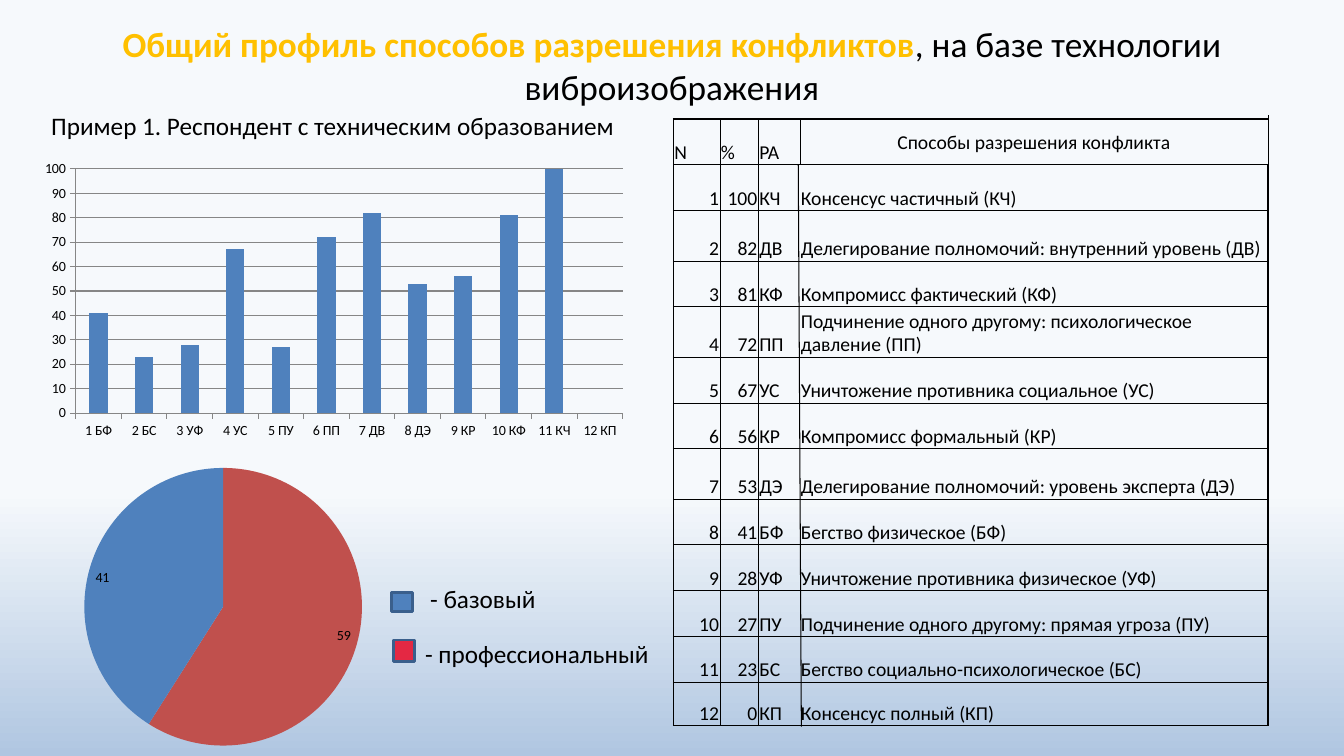
from dataclasses import dataclass

import lxml.etree
import pptx
import pptx.chart.data
import pptx.dml.color
import pptx.enum.chart
import pptx.enum.dml
import pptx.enum.shapes
import pptx.enum.text
import pptx.oxml
import pptx.oxml.ns
import pptx.util

Pt = pptx.util.Pt
qn = pptx.oxml.ns.qn
Align = pptx.enum.text.PP_ALIGN
Anchor = pptx.enum.text.MSO_ANCHOR

FONT = "Calibri"
COLORS = {
    "text": "000000", "accent": "FFC000", "blue": "4F81BD", "red": "C0504D",
    "key_red": "E42843", "key_line": "3A5F8C", "grid": "868686",
    "sky": "F6F9FC", "haze": "B0C6E1",
}


@dataclass
class Frame:
    left: float
    top: float
    width: float
    height: float

    def lengths(self) -> tuple:
        return Pt(self.left), Pt(self.top), Pt(self.width), Pt(self.height)


@dataclass
class Way:
    percent: int
    code: str
    name: str


@dataclass
class Caption:
    text: str
    frame: Frame
    wrap: bool = True


@dataclass
class Key:
    color: str
    frame: Frame


@dataclass
class Rule:
    start: tuple[float, float]
    end: tuple[float, float]


WAYS = [
    Way(100, "КЧ", "Консенсус частичный"),
    Way(82, "ДВ", "Делегирование полномочий: внутренний уровень"),
    Way(81, "КФ", "Компромисс фактический"),
    Way(72, "ПП", "Подчинение одного другому: психологическое давление"),
    Way(67, "УС", "Уничтожение противника социальное"),
    Way(56, "КР", "Компромисс формальный"),
    Way(53, "ДЭ", "Делегирование полномочий: уровень эксперта"),
    Way(41, "БФ", "Бегство физическое"),
    Way(28, "УФ", "Уничтожение противника физическое"),
    Way(27, "ПУ", "Подчинение одного другому: прямая угроза"),
    Way(23, "БС", "Бегство социально-психологическое"),
    Way(0, "КП", "Консенсус полный"),
]
PROFILE = "БФ БС УФ УС ПУ ПП ДВ ДЭ КР КФ КЧ КП".split()
COLUMN_WIDTHS = [33.3, 27.4, 29.7, 334.4]
ROW_HEIGHTS = {2: 36, 4: 36, 7: 36, 12: 31}
ROW_HEIGHT = 32.7

CAPTIONS = [
    Caption("- базовый", Frame(300.2, 413.3, 95, 29), wrap=False),
    Caption("- профессиональный", Frame(296.6, 452.2, 182.2, 29)),
    Caption("Пример 1. Респондент с техническим образованием", Frame(29.5, 74.9, 428.4, 29)),
]
KEYS = [
    Key("blue", Frame(279.4, 423.4, 15.1, 13.7)),
    Key("key_red", Frame(280.8, 457.2, 15.1, 15.1)),
]
RULES = [
    Rule((570.2, 117.4), (572.4, 519.1)),
    Rule((905.8, 118.1), (905.8, 82.1)),
]


def rgb(name: str) -> pptx.dml.color.RGBColor:
    return pptx.dml.color.RGBColor.from_string(COLORS[name])


def style_font(font, size: float, color: str = "text", bold: bool = False) -> None:
    font.name, font.size, font.bold = FONT, Pt(size), bold
    font.color.rgb = rgb(color)


def paint_background(page) -> None:
    fill = page.background.fill
    fill.gradient()
    fill.gradient_angle = 270
    for stop, name, position in zip(fill.gradient_stops, ("sky", "haze"), (0.65, 1)):
        stop.color.rgb = rgb(name)
        stop.position = position


def write_title(page) -> None:
    title = page.shapes.title
    title.left, title.top, title.width, title.height = Frame(48, 21.6, 864, 49.7).lengths()
    frame = title.text_frame
    frame.auto_size = pptx.enum.text.MSO_AUTO_SIZE.NONE
    frame.vertical_anchor = Anchor.MIDDLE
    para = frame.paragraphs[0]
    para.alignment = Align.CENTER
    parts = [
        ("Общий профиль способов разрешения конфликтов", "accent", True),
        (", на базе технологии виброизображения", "text", False),
    ]
    for text, color, bold in parts:
        span = para.add_run()
        span.text = text
        style_font(span.font, 25.2, color, bold)


def add_plain_chart(page, kind, frame: Frame, labels: list, values: list, layout: tuple):
    data = pptx.chart.data.CategoryChartData(number_format="0")
    data.categories = labels
    data.add_series("Series 1", values)
    chart = page.shapes.add_chart(kind, *frame.lengths(), data).chart
    chart.has_legend = chart.has_title = False
    style_font(chart.font, 10)
    area = chart.element.find(f".//{qn('c:plotArea')}")
    for old in area.findall(qn("c:layout")):
        area.remove(old)
    holder = lxml.etree.Element(qn("c:layout"))
    manual = lxml.etree.SubElement(holder, qn("c:manualLayout"))
    settings = [("layoutTarget", "inner"), ("xMode", "edge"), ("yMode", "edge"),
                *zip("xywh", layout)]
    for tag, value in settings:
        lxml.etree.SubElement(manual, qn(f"c:{tag}")).set("val", str(value))
    area.insert(0, holder)
    return chart


def add_profile_chart(page) -> None:
    percents = {way.code: way.percent for way in WAYS}
    chart = add_plain_chart(
        page, pptx.enum.chart.XL_CHART_TYPE.COLUMN_CLUSTERED, Frame(19.4, 105.8, 434.2, 249.1),
        [f"{number} {code}" for number, code in enumerate(PROFILE, 1)],
        [percents[code] for code in PROFILE], (0.08, 0.06, 0.9, 0.7))
    plot = chart.plots[0]
    plot.gap_width = 150
    plot.vary_by_categories = False
    bars = plot.series[0].format.fill
    bars.solid()
    bars.fore_color.rgb = rgb("blue")
    scale = chart.value_axis
    scale.minimum_scale, scale.maximum_scale, scale.major_unit = 0, 100, 10
    scale.tick_labels.number_format = "0"
    scale.tick_labels.number_format_is_linked = False
    for axis in (scale, chart.category_axis):
        axis.major_tick_mark = pptx.enum.chart.XL_TICK_MARK.OUTSIDE
    for ruled in (scale, chart.category_axis, scale.major_gridlines):
        ruled.format.line.color.rgb = rgb("grid")
        ruled.format.line.width = Pt(0.75)


def add_share_chart(page) -> None:
    chart = add_plain_chart(
        page, pptx.enum.chart.XL_CHART_TYPE.PIE, Frame(28.8, 334.1, 241.9, 198.7),
        ["1", "2"], [59, 41], (0.13, 0, 0.82, 1))
    plot = chart.plots[0]
    plot.vary_by_categories = True
    for index, color in enumerate(("red", "blue")):
        fill = plot.series[0].points[index].format.fill
        fill.solid()
        fill.fore_color.rgb = rgb(color)
    plot.has_data_labels = True
    labels = plot.data_labels
    labels.show_value = True
    labels.number_format, labels.number_format_is_linked = "0", False
    labels.position = pptx.enum.chart.XL_LABEL_POSITION.INSIDE_END
    style_font(labels.font, 10)


def set_borders(cell, left: float, right: float, top: float, bottom: float) -> None:
    properties = cell._tc.get_or_add_tcPr()
    for index, (side, width) in enumerate(zip("LRTB", (left, right, top, bottom))):
        line = lxml.etree.Element(qn(f"a:ln{side}"), w=str(int(Pt(width))))
        if width:
            fill = lxml.etree.SubElement(line, qn("a:solidFill"))
            lxml.etree.SubElement(fill, qn("a:srgbClr"), val=COLORS["text"])
        else:
            lxml.etree.SubElement(line, qn("a:noFill"))
        properties.insert(index, line)


def add_ways_table(page) -> None:
    rows = [["N", "%", "PA", "Способы разрешения конфликта"]]
    rows += [[str(rank), str(way.percent), way.code, f"{way.name} ({way.code})"]
             for rank, way in enumerate(WAYS, 1)]
    heights = [ROW_HEIGHTS.get(index, ROW_HEIGHT) for index in range(len(rows))]
    frame = Frame(481, 85, sum(COLUMN_WIDTHS), sum(heights))
    table = page.shapes.add_table(len(rows), len(COLUMN_WIDTHS), *frame.lengths()).table
    table.first_row = table.horz_banding = False
    for column, width in zip(table.columns, COLUMN_WIDTHS):
        column.width = Pt(width)
    for r, (texts, height) in enumerate(zip(rows, heights)):
        table.rows[r].height = Pt(height)
        header = r == 0
        for c, text in enumerate(texts):
            cell = table.cell(r, c)
            cell.fill.background()
            cell.margin_left = cell.margin_right = cell.margin_top = Pt(0.7)
            cell.margin_bottom = 0
            cell.vertical_anchor = Anchor.MIDDLE if header and c == 3 else Anchor.BOTTOM
            cell.text_frame.text = text
            para = cell.text_frame.paragraphs[0]
            if header:
                para.alignment = Align.CENTER if c == 3 else Align.LEFT
            else:
                para.alignment = Align.RIGHT if c < 2 else Align.LEFT
            style_font(para.runs[0].font, 14)
            inner = 0.5 if header else 0
            set_borders(cell, (1, 0.5, 0.5, inner)[c], (0.5, 0.5, inner, 0 if header else 1)[c],
                        1 if r < 2 else 0.5, 1 if r in (0, len(rows) - 1) else 0.5)


def add_key(page, key: Key) -> None:
    box = page.shapes.add_shape(pptx.enum.shapes.MSO_SHAPE.RECTANGLE, *key.frame.lengths())
    box.shadow.inherit = False
    box.fill.solid()
    box.fill.fore_color.rgb = rgb(key.color)
    box.line.color.rgb = rgb("key_line")
    box.line.width = Pt(2)


def add_caption(page, caption: Caption) -> None:
    frame = page.shapes.add_textbox(*caption.frame.lengths()).text_frame
    frame.word_wrap = caption.wrap
    frame.auto_size = pptx.enum.text.MSO_AUTO_SIZE.SHAPE_TO_FIT_TEXT
    frame.text = caption.text
    style_font(frame.paragraphs[0].runs[0].font, 18)


def add_rule(page, rule: Rule) -> None:
    line = page.shapes.add_connector(
        pptx.enum.shapes.MSO_CONNECTOR.STRAIGHT, *map(Pt, rule.start + rule.end))
    line.line.color.rgb = rgb("text")
    line.line.width = Pt(0.75)
    lxml.etree.SubElement(line._element.spPr, qn("a:effectLst"))


def main() -> None:
    deck = pptx.Presentation()
    deck.slide_width, deck.slide_height = Pt(960), Pt(540)
    page = deck.slides.add_slide(deck.slide_layouts[5])
    paint_background(page)
    write_title(page)
    add_profile_chart(page)
    add_ways_table(page)
    add_share_chart(page)
    for key in KEYS:
        add_key(page, key)
    for caption in CAPTIONS:
        add_caption(page, caption)
    for rule in RULES:
        add_rule(page, rule)
    deck.save("out.pptx")


if __name__ == "__main__":
    main()
